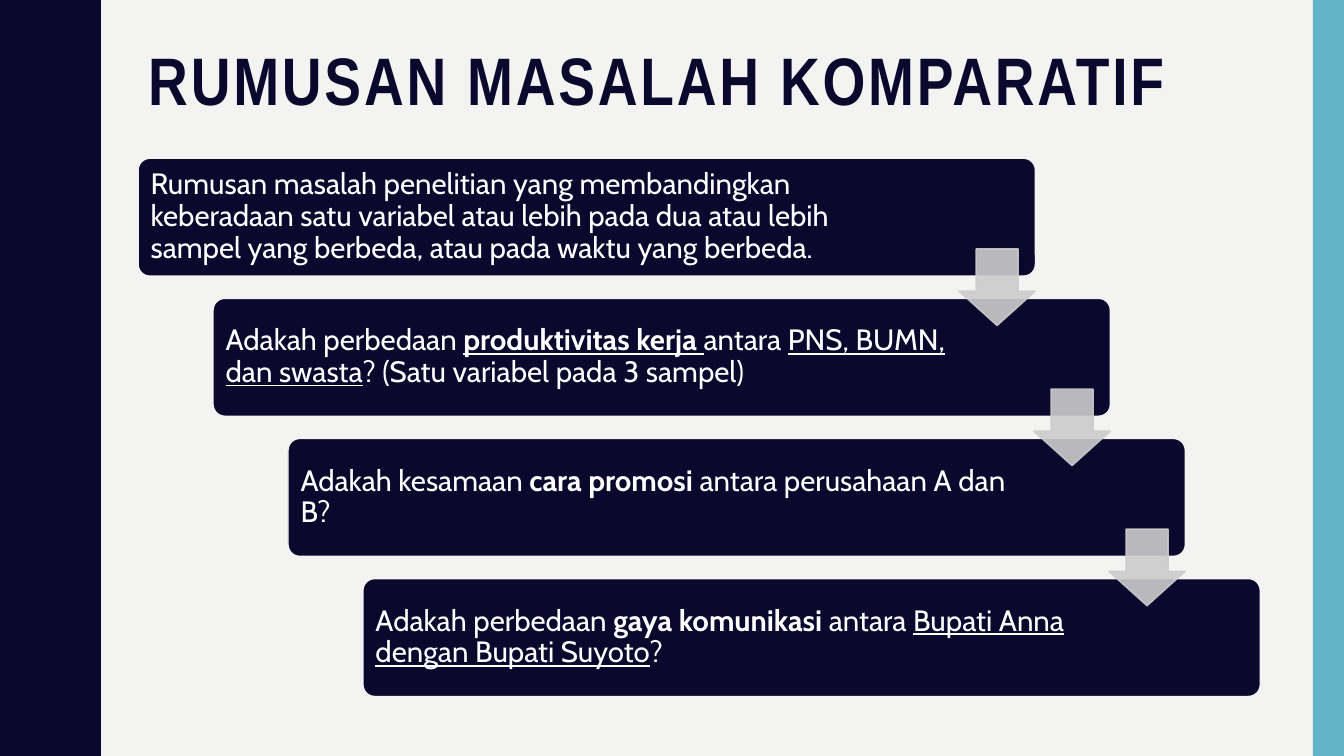
from lxml import etree
from pptx import Presentation
from pptx.dml.color import RGBColor
from pptx.enum import shapes, text
from pptx.oxml.ns import qn
from pptx.util import Inches, Pt

NAVY, TEAL, PAPER, GREY, WHITE = "0B082E", "62B4C6", "F3F3F2", "CCCCCD", "FFFFFF"
BOX_LEFT, BOX_TOP, BOX_WIDTH, BOX_HEIGHT = 1.37, 1.57, 8.9, 1.17
STEP_X, STEP_Y = 2.23 / 3, 1.39
ARROW_SIZE, ARROW_DROP = 0.76, 0.9
WAVE_PERIOD, WAVE_COUNT = 1.5, 5
HALF_WAVE = [
    (0.78, 0), (0.78, 0.07), (0.79, 0.14), (0.8, 0.2), (0.81, 0.25),
    (0.83, 0.29), (0.85, 0.33), (0.87, 0.38), (0.89, 0.42), (0.91, 0.46),
    (0.93, 0.5), (0.95, 0.55), (0.96, 0.61), (0.97, 0.68), (0.97, 0.75),
]
STATEMENTS = [
    [("Rumusan masalah penelitian yang membandingkan keberadaan satu variabel "
      "atau lebih pada dua atau lebih sampel yang berbeda, atau pada waktu yang "
      "berbeda.", "")],
    [("Adakah perbedaan ", ""), ("produktivitas kerja ", "bu"), ("antara ", ""),
     ("PNS, BUMN, dan swasta", "u"), ("? (Satu variabel pada 3 sampel)", "")],
    [("Adakah kesamaan ", ""), ("cara promosi ", "b"),
     ("antara perusahaan A dan B?", "")],
    [("Adakah perbedaan ", ""), ("gaya komunikasi ", "b"), ("antara ", ""),
     ("Bupati Anna dengan Bupati Suyoto", "u"), ("?", "")],
]


def colour(hex_code):
    """Turn a hex string into a colour."""
    return RGBColor.from_string(hex_code)


def paint(shape, fill, line=None, alpha=None):
    """Set fill, outline and opacity, and remove the shadow."""
    shape.shadow.inherit = False
    shape.fill.solid()
    shape.fill.fore_color.rgb = colour(fill)
    if line:
        shape.line.color.rgb = colour(line)
        shape.line.width = Pt(1)
    else:
        shape.line.fill.background()
    if alpha:
        for node in shape._element.spPr.iter(qn("a:srgbClr")):
            etree.SubElement(node, qn("a:alpha"), val=str(alpha * 1000))


def add_preset(page, kind, left, top, width, height):
    """Add a preset shape measured in inches."""
    return page.shapes.add_shape(
        kind, Inches(left), Inches(top), Inches(width), Inches(height))


def add_span(para, words, size, font, hex_code, style=""):
    """Add one formatted run; style holds b for bold and u for underline."""
    span = para.add_run()
    span.text = words
    span.font.size = Pt(size)
    span.font.name = font
    span.font.color.rgb = colour(hex_code)
    span.font.bold = "b" in style
    span.font.underline = "u" in style
    return span


def add_wave(page):
    """Draw the wavy band along the left edge."""
    period = HALF_WAVE + [(x, WAVE_PERIOD - y) for x, y in HALF_WAVE[-2::-1]]
    edge = [(x, y + WAVE_PERIOD * turn)
            for turn in range(WAVE_COUNT) for x, y in period]
    outline = page.shapes.build_freeform(0, 0, scale=Inches(1))
    outline.add_line_segments(edge + [(0, WAVE_PERIOD * WAVE_COUNT)], close=True)
    paint(outline.convert_to_shape(), NAVY)


def format_title(page, words):
    """Place the title placeholder and write the heading."""
    title = page.shapes.title
    title.left, title.top = Inches(1.37), Inches(0.42)
    title.width, title.height = Inches(11.13), Inches(1.04)
    frame = title.text_frame
    frame.auto_size = text.MSO_AUTO_SIZE.NONE
    frame.vertical_anchor = text.MSO_ANCHOR.TOP
    para = frame.paragraphs[0]
    para.alignment = text.PP_ALIGN.LEFT
    para.line_spacing = 0.9
    span = add_span(para, words, 48, "Arial Narrow", NAVY, "b")
    span.font._element.set("spc", "200")


def add_statement(page, left, top, spans):
    """Add one rounded box with its text."""
    box = add_preset(page, shapes.MSO_SHAPE.ROUNDED_RECTANGLE,
                     left, top, BOX_WIDTH, BOX_HEIGHT)
    box.adjustments[0] = 0.1
    paint(box, NAVY, PAPER)
    frame = box.text_frame
    frame.word_wrap = True
    frame.vertical_anchor = text.MSO_ANCHOR.MIDDLE
    frame.margin_left = frame.margin_top = frame.margin_bottom = Inches(0.09)
    frame.margin_right = Inches(1.55)
    para = frame.paragraphs[0]
    para.alignment = text.PP_ALIGN.LEFT
    para.line_spacing = 0.9
    for words, style in spans:
        add_span(para, words, 21, "Cabin", WHITE, style)


def add_arrow(page, left, top):
    """Add one translucent arrow pointing to the next box."""
    arrow = add_preset(page, shapes.MSO_SHAPE.DOWN_ARROW,
                       left, top, ARROW_SIZE, ARROW_SIZE)
    arrow.adjustments[0], arrow.adjustments[1] = 0.55, 0.45
    paint(arrow, GREY, GREY, alpha=90)


def main():
    """Build the slide and save it."""
    deck = Presentation()
    deck.slide_width, deck.slide_height = Inches(13.33), Inches(7.5)
    page = deck.slides.add_slide(deck.slide_layouts[5])
    page.background.fill.solid()
    page.background.fill.fore_color.rgb = colour(PAPER)
    add_wave(page)
    paint(add_preset(page, shapes.MSO_SHAPE.RECTANGLE, 13.02, 0, 0.31, 7.5), TEAL)
    format_title(page, "RUMUSAN MASALAH KOMPARATIF")
    corners = [(BOX_LEFT + STEP_X * i, BOX_TOP + STEP_Y * i)
               for i in range(len(STATEMENTS))]
    for (left, top), spans in zip(corners, STATEMENTS):
        add_statement(page, left, top, spans)
    for left, top in corners[:-1]:
        add_arrow(page, left + BOX_WIDTH - ARROW_SIZE, top + ARROW_DROP)
    deck.save("out.pptx")


if __name__ == "__main__":
    main()
